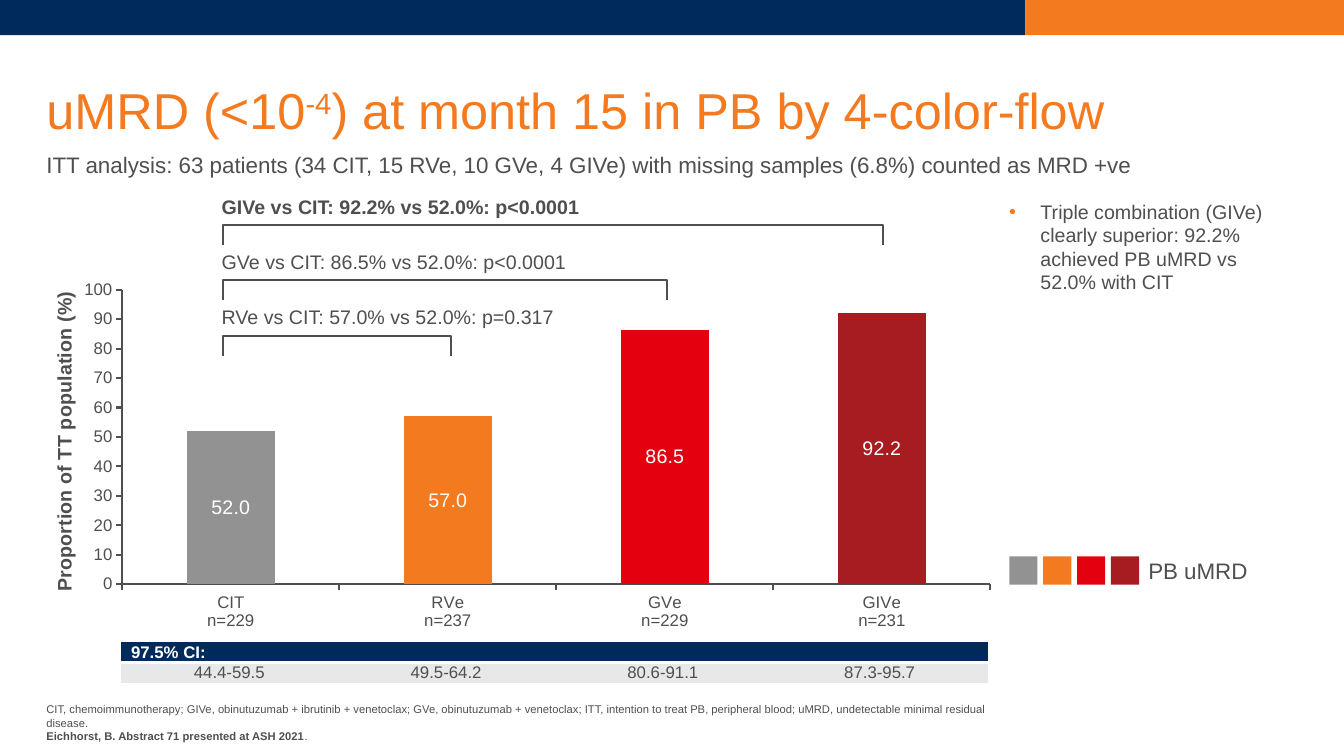
from lxml import etree
from pptx import Presentation
from pptx import util as u
from pptx.chart.data import CategoryChartData
from pptx.dml.color import RGBColor
from pptx.enum import chart as ch, shapes as sh, text as tx
from pptx.oxml import parse_xml
from pptx.oxml.ns import nsdecls, qn

NAVY = RGBColor(0x00, 0x2A, 0x5C)
ORANGE = RGBColor(0xF4, 0x7A, 0x20)
GREY = RGBColor(0x92, 0x92, 0x92)
RED = RGBColor(0xE3, 0x01, 0x0F)
DARK = RGBColor(0xA7, 0x1C, 0x20)
INK = RGBColor(0x4E, 0x4F, 0x4E)
PALE = RGBColor(0xE7, 0xE8, 0xEA)
WHITE = RGBColor(0xFF, 0xFF, 0xFF)
ARMS = [("CIT\nn=229", 52.0, GREY, "44.4-59.5"),
        ("RVe\nn=237", 57.0, ORANGE, "49.5-64.2"),
        ("GVe\nn=229", 86.5, RED, "80.6-91.1"),
        ("GIVe\nn=231", 92.2, DARK, "87.3-95.7")]
TESTS = [("GIVe vs CIT: 92.2% vs 52.0%: p<0.0001", 8.76, True),
         ("GVe vs CIT: 86.5% vs 52.0%: p<0.0001", 6.62, False),
         ("RVe vs CIT: 57.0% vs 52.0%: p=0.317", 4.47, False)]
PAD = (0.1, 0.05, 0.1, 0.05)
NOPAD = (0, 0, 0, 0)


def style(font, size, color=INK, bold=False):
    font.name, font.size, font.bold = "Arial", u.Pt(size), bold
    font.color.rgb = color


def frame(shape, pad, anchor):
    tf = shape.text_frame
    tf.word_wrap, tf.auto_size = True, tx.MSO_AUTO_SIZE.NONE
    tf.vertical_anchor = anchor
    (tf.margin_left, tf.margin_top,
     tf.margin_right, tf.margin_bottom) = [u.Inches(n) for n in pad]
    return tf


def write(slide, box, words, size, pad=PAD, anchor=tx.MSO_ANCHOR.TOP, bold=False):
    shape = slide.shapes.add_textbox(*[u.Inches(n) for n in box])
    tf = frame(shape, pad, anchor)
    tf.text = words
    for para in tf.paragraphs:
        for run in para.runs:
            style(run.font, size, bold=bold)
    return tf


def block(slide, box, color):
    shape = slide.shapes.add_shape(sh.MSO_SHAPE.RECTANGLE, *[u.Inches(n) for n in box])
    shape.shadow.inherit = False
    shape.fill.solid()
    shape.fill.fore_color.rgb = color
    shape.line.fill.background()


def add_head(slide, left, width):
    # Top band
    block(slide, (0, 0, 10.17, 0.35), NAVY)
    block(slide, (10.17, 0, 3.16, 0.35), ORANGE)
    # Title with a raised exponent
    title = slide.shapes.title
    title.left, title.top, title.width, title.height = [
        u.Inches(n) for n in (left, 0.41, width, 0.98)]
    para = frame(title, NOPAD, tx.MSO_ANCHOR.BOTTOM).paragraphs[0]
    para.alignment, para.line_spacing = tx.PP_ALIGN.LEFT, 0.9
    for words in ("uMRD (<10", "-4", ") at month 15 in PB by 4-color-flow"):
        run = para.add_run()
        run.text = words
        style(run.font, 36, ORANGE)
    para.runs[1].font._element.set("baseline", "30000")
    # Subtitle
    sub = write(slide, (left, 1.27, width, 0.71),
                "ITT analysis: 63 patients (34 CIT, 15 RVe, 10 GVe, 4 GIVe) "
                "with missing samples (6.8%) counted as MRD +ve",
                16, (0, 0.04, 0, 0), tx.MSO_ANCHOR.MIDDLE)
    sub.paragraphs[0].line_spacing = 0.9


def layout(target, marks):
    parts = "".join(f'<c:{k} val="{v}"/>' for k, v in marks)
    return parse_xml(f'<c:layout {nsdecls("c")}><c:manualLayout>{parts}'
                     f'</c:manualLayout></c:layout>')


def place(target, after, marks):
    for old in target.findall(qn("c:layout")):
        target.remove(old)
    node = layout(target, marks)
    if after is None:
        target.insert(0, node)
    else:
        after.addnext(node)


def add_bars(slide, box):
    data = CategoryChartData(number_format="0.0")
    data.categories = [arm[0] for arm in ARMS]
    data.add_series("Series 1", [arm[1] for arm in ARMS])
    chart = slide.shapes.add_chart(ch.XL_CHART_TYPE.COLUMN_CLUSTERED,
                                   *[u.Inches(n) for n in box], data).chart
    chart.has_legend = chart.has_title = False
    style(chart.font, 10)
    # Columns and their values
    plot = chart.plots[0]
    plot.gap_width, plot.overlap, plot.vary_by_categories = 146, -27, False
    for i, arm in enumerate(ARMS):
        fill = plot.series[0].points[i].format.fill
        fill.solid()
        fill.fore_color.rgb = arm[2]
    plot.has_data_labels = True
    labels = plot.data_labels
    labels.show_value, labels.position = True, ch.XL_LABEL_POSITION.CENTER
    labels.number_format, labels.number_format_is_linked = "0.0", False
    style(labels.font, 14, WHITE)
    # Axes
    for axis in (chart.category_axis, chart.value_axis):
        axis.has_major_gridlines = False
        axis.major_tick_mark = ch.XL_TICK_MARK.OUTSIDE
        axis.minor_tick_mark = ch.XL_TICK_MARK.NONE
        style(axis.tick_labels.font, 12)
        axis.format.line.color.rgb, axis.format.line.width = INK, u.Pt(1.5)
    axis.minimum_scale, axis.maximum_scale, axis.major_unit = 0, 100, 10
    axis.tick_labels.number_format = "0"
    axis.tick_labels.number_format_is_linked = False
    name = axis.axis_title.text_frame
    name.text = "Proportion of TT population (%)"
    style(name.paragraphs[0].runs[0].font, 14, bold=True)
    # Fixed places of the axis title and the plot
    edges = [("xMode", "edge"), ("yMode", "edge")]
    head = axis.axis_title._element
    place(head, head.find(qn("c:tx")), edges + [("x", 0.03), ("y", 0.115)])
    area = chart._chartSpace.chart.plotArea
    place(area, None, [("layoutTarget", "inner")] + edges +
          [("x", 0.105), ("y", 0.119), ("w", 0.875), ("h", 0.649)])


def add_tests(slide, left, top):
    # Comparison labels and brackets, one step apart
    for i, (words, right, bold) in enumerate(TESTS):
        y = top + 0.55 * i
        write(slide, (left, y, 5.46, 0.34), words, 14, bold=bold)
        x, bar = left + 0.11, y + 0.35
        pen = slide.shapes.build_freeform(u.Inches(x), u.Inches(bar + 0.2))
        pen.add_line_segments([(u.Inches(a), u.Inches(b)) for a, b in
                               ((x, bar), (right, bar), (right, bar + 0.2))], close=False)
        shape = pen.convert_to_shape()
        shape.shadow.inherit = False
        shape.fill.background()
        shape.line.color.rgb, shape.line.width = INK, u.Pt(1.5)


def add_ranges(slide, box):
    table = slide.shapes.add_table(2, len(ARMS), *[u.Inches(n) for n in box]).table
    table.first_row = table.horz_banding = False
    table._tbl.tblPr.find(qn("a:tableStyleId")).text = "{2D5ABB26-0587-4C30-8999-92F81FD0307C}"
    rows = [["97.5% CI:", "", "", ""], [arm[3] for arm in ARMS]]
    for r, row in enumerate(rows):
        for c, words in enumerate(row):
            cell = table.cell(r, c)
            cell.margin_top = cell.margin_bottom = 0
            cell.vertical_anchor = tx.MSO_ANCHOR.MIDDLE
            cell.fill.solid()
            cell.fill.fore_color.rgb = PALE if r else NAVY
            para = cell.text_frame.paragraphs[0]
            para.text = words
            para.alignment = tx.PP_ALIGN.CENTER if r else tx.PP_ALIGN.LEFT
            for run in para.runs:
                style(run.font, 12, INK if r else WHITE, not r)
            if not words:
                etree.SubElement(para._p, qn("a:endParaRPr")).set("sz", "1200")
            # White rule between the rows
            side = "lnT" if r else "lnB"
            cell._tc.tcPr.insert(0, parse_xml(
                f'<a:{side} {nsdecls("a")} w="38100"><a:solidFill>'
                f'<a:srgbClr val="{WHITE}"/></a:solidFill></a:{side}>'))


def add_side(slide, left):
    # Key message
    tf = write(slide, (left, 1.98, 2.86, 0.96),
               "Triple combination (GIVe) clearly superior: 92.2% achieved "
               "PB uMRD vs 52.0% with CIT", 14, NOPAD)
    props = tf.paragraphs[0]._p.get_or_add_pPr()
    props.set("marL", str(u.Inches(0.31)))
    props.set("indent", str(-u.Inches(0.31)))
    tint = etree.SubElement(props, qn("a:buClr"))
    etree.SubElement(tint, qn("a:srgbClr")).set("val", str(ORANGE))
    etree.SubElement(props, qn("a:buFont")).set("typeface", "Arial")
    etree.SubElement(props, qn("a:buChar")).set("char", "•")
    # Colour key
    for i, arm in enumerate(ARMS):
        block(slide, (left + 0.336 * i, 5.52, 0.28, 0.28), arm[2])
    write(slide, (left + 1.28, 5.48, 1.82, 0.37), "PB uMRD", 16)


def add_foot(slide, box):
    tf = write(slide, box,
               "CIT, chemoimmunotherapy; GIVe, obinutuzumab + ibrutinib + venetoclax; "
               "GVe, obinutuzumab + venetoclax; ITT, intention to treat PB, peripheral "
               "blood; uMRD, undetectable minimal residual disease.",
               8, NOPAD, tx.MSO_ANCHOR.BOTTOM)
    para = tf.add_paragraph()
    for words, bold in (("Eichhorst, B. Abstract 71 presented at ASH 2021", True), (".", False)):
        run = para.add_run()
        run.text = words
        style(run.font, 8, bold=bold)


def main():
    deck = Presentation()
    deck.slide_width, deck.slide_height = u.Inches(13.33), u.Inches(7.5)
    slide = deck.slides.add_slide(deck.slide_layouts[5])
    add_head(slide, 0.46, 12.43)
    add_bars(slide, (0.18, 2.34, 9.84, 4.5))
    add_ranges(slide, (1.2, 6.37, 8.6, 0.4))
    add_tests(slide, 2.1, 1.88)
    add_side(slide, 10.01)
    add_foot(slide, (0.46, 6.95, 9.37, 0.42))
    deck.save("out.pptx")


if __name__ == "__main__":
    main()
